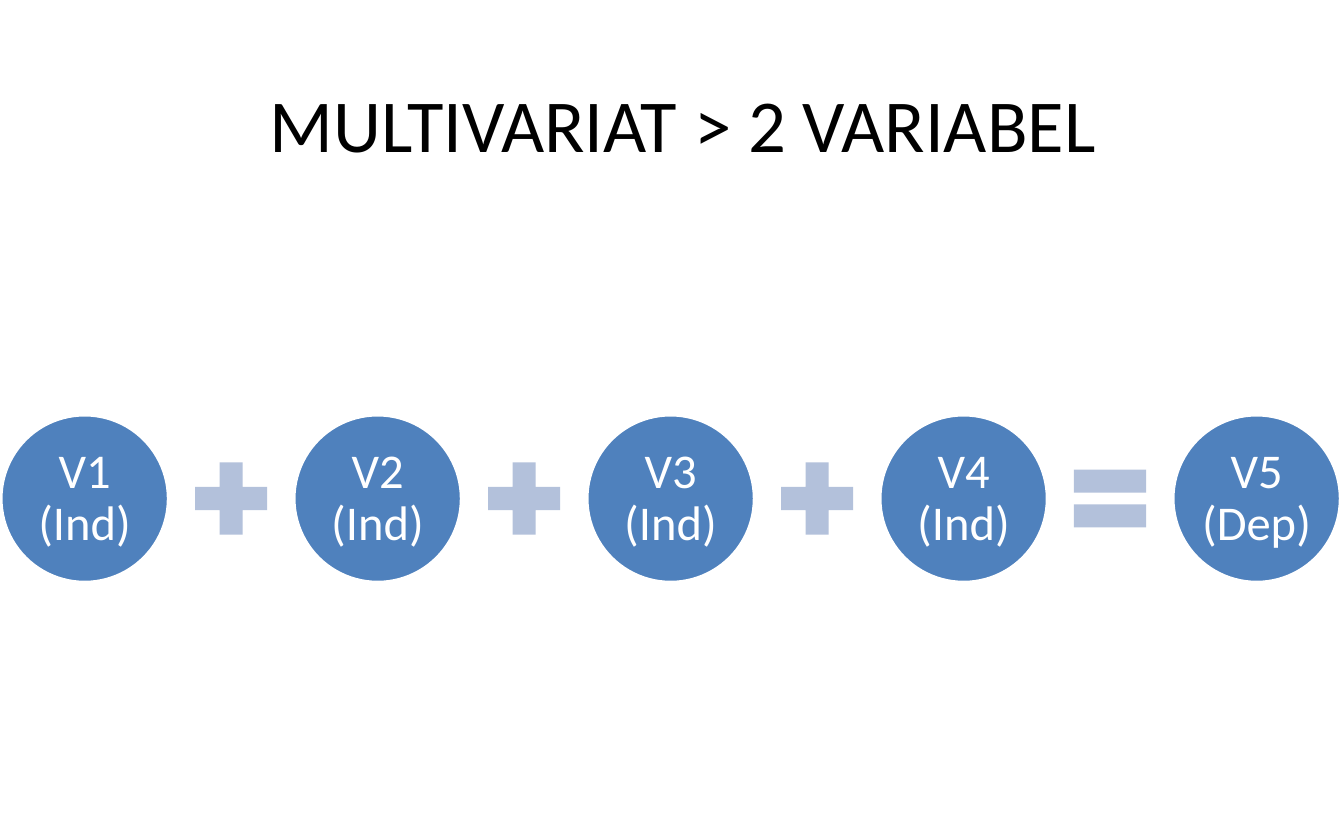
from pptx import Presentation
from pptx.dml.color import RGBColor
from pptx.enum.shapes import MSO_SHAPE
from pptx.enum.text import MSO_ANCHOR, MSO_AUTO_SIZE, PP_ALIGN
from pptx.util import Inches, Pt

CIRCLE, PLUS, EQUAL = MSO_SHAPE.OVAL, MSO_SHAPE.MATH_PLUS, MSO_SHAPE.MATH_EQUAL
MIDDLE = MSO_ANCHOR.MIDDLE
NO_AUTOFIT = MSO_AUTO_SIZE.NONE
CENTER = PP_ALIGN.CENTER

COLORS = {"title": "000000", "circle": "4F81BD", "operator": "B3C1DB", "white": "FFFFFF"}
FONT = "Calibri"

VARIABLES = ["V1 (Ind)", "V2 (Ind)", "V3 (Ind)", "V4 (Ind)", "V5 (Dep)"]
OPERATORS = [PLUS, PLUS, PLUS, EQUAL]
FIRST_CENTER, CENTER_Y = 0.63, 3.71
PITCH = 2.18
CIRCLE_SIZE, OPERATOR_SIZE = 1.25, 0.73


def color(name):
    return RGBColor.from_string(COLORS[name])


class EquationSlide:
    """Holds the slide and the style of its equation."""

    def __init__(self, deck):
        self.slide = deck.slides.add_slide(deck.slide_layouts[5])

    def style_text(self, paragraph, size, color_name):
        paragraph.alignment = CENTER
        paragraph.font.name = FONT
        paragraph.font.size = Pt(size)
        paragraph.font.color.rgb = color(color_name)

    def title(self, text, left, top, width, height):
        box = self.slide.shapes.title
        box.left, box.top = Inches(left), Inches(top)
        box.width, box.height = Inches(width), Inches(height)
        frame = box.text_frame
        frame.text = text
        frame.auto_size = NO_AUTOFIT
        frame.vertical_anchor = MIDDLE
        self.style_text(frame.paragraphs[0], 40, "title")

    def centered_shape(self, kind, center_x, size, fill):
        shape = self.slide.shapes.add_shape(
            kind, Inches(center_x - size / 2), Inches(CENTER_Y - size / 2),
            Inches(size), Inches(size))
        shape.shadow.inherit = False
        shape.fill.solid()
        shape.fill.fore_color.rgb = color(fill)
        return shape

    def variable(self, text, center_x):
        circle = self.centered_shape(CIRCLE, center_x, CIRCLE_SIZE, "circle")
        circle.line.color.rgb = color("white")
        circle.line.width = Pt(2)
        frame = circle.text_frame
        frame.word_wrap = True
        frame.vertical_anchor = MIDDLE
        frame.margin_left = frame.margin_right = Inches(0.03)
        frame.margin_top = frame.margin_bottom = Inches(0.04)
        frame.text = text
        para = frame.paragraphs[0]
        para.line_spacing = 0.9
        self.style_text(para, 26, "white")

    def operator(self, kind, center_x):
        sign = self.centered_shape(kind, center_x, OPERATOR_SIZE, "operator")
        sign.line.fill.background()


def main():
    deck = Presentation()
    deck.slide_width, deck.slide_height = Inches(10), Inches(6.25)
    page = EquationSlide(deck)
    page.title("MULTIVARIAT > 2 VARIABEL", 0.83, 0.53, 8.5, 0.77)
    for index, name in enumerate(VARIABLES):
        page.variable(name, FIRST_CENTER + index * PITCH)
    for index, kind in enumerate(OPERATORS):
        page.operator(kind, FIRST_CENTER + (index + 0.5) * PITCH)
    deck.save("out.pptx")


if __name__ == "__main__":
    main()
